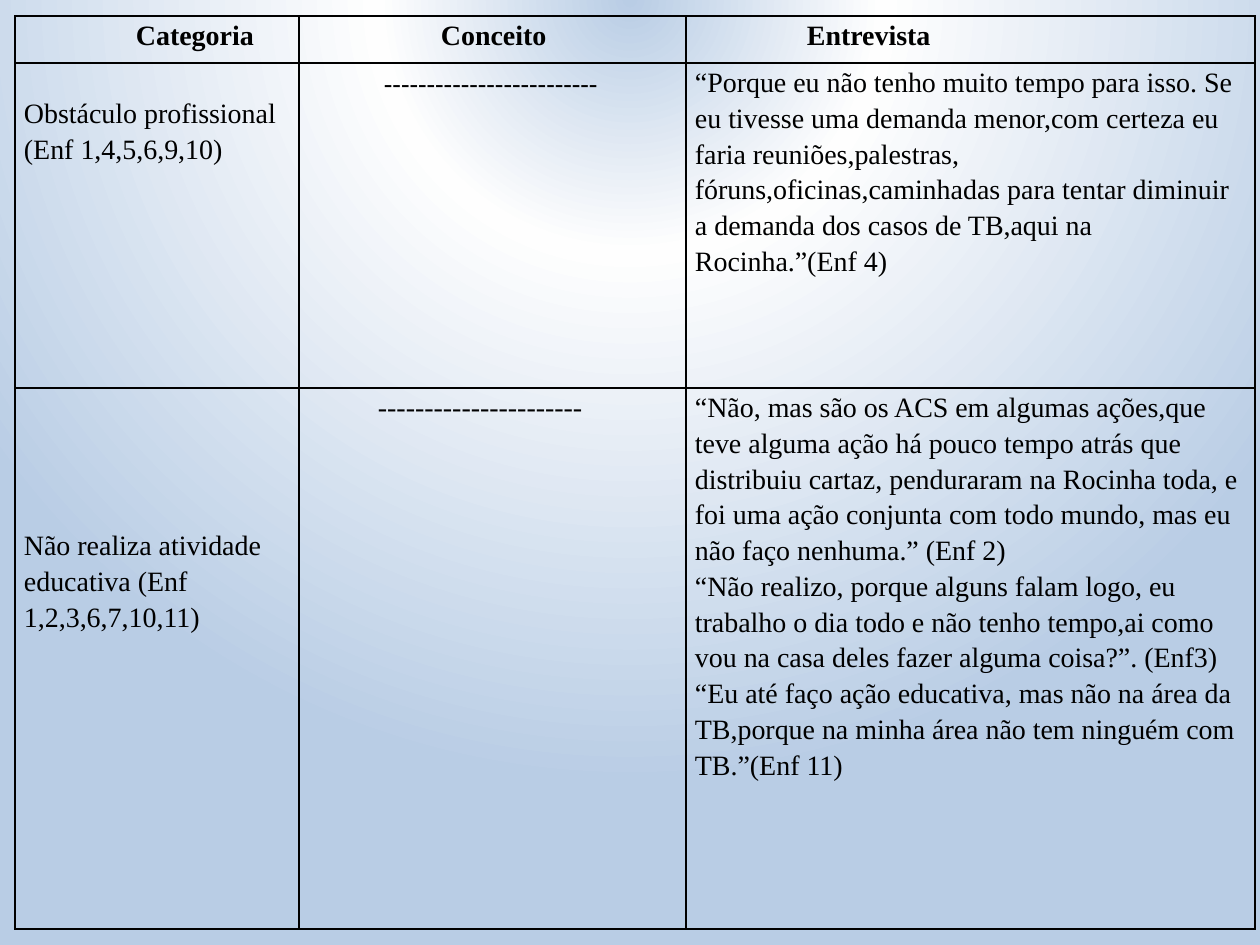
import dataclasses

import lxml.etree
import pptx
import pptx.dml.color
import pptx.oxml
import pptx.oxml.ns
import pptx.slide
import pptx.table
import pptx.util

EMU = 914400 / 126
COLORS = {"ink": "000000", "sky": "B9CDE5", "glow": "FEFEFE"}
SERIF = "Times New Roman"
NS = pptx.oxml.ns.nsdecls("a")
PAD = 9
COLS = [284, 387, 569]
ROWS = [47, 325, 541]


@dataclasses.dataclass
class Entry:
    lines: list[str]
    left: int = 0
    top: int = 0
    bold: bool = False
    font: str = SERIF


GRID = [
    [
        Entry(["Categoria"], left=112, bold=True),
        Entry(["Conceito"], left=133, bold=True),
        Entry(["Entrevista"], left=112, bold=True),
    ],
    [
        Entry(["Obstáculo profissional", "(Enf 1,4,5,6,9,10)"], top=31),
        Entry(["-" * 25], left=76, font="Calibri"),
        Entry([
            "“Porque eu não tenho muito tempo para isso. Se eu tivesse uma demanda "
            "menor,com certeza eu faria reuniões,palestras, fóruns,oficinas,caminhadas "
            "para tentar diminuir a demanda dos casos de TB,aqui na Rocinha.”(Enf 4)",
        ]),
    ],
    [
        Entry(["Não realiza atividade educativa (Enf 1,2,3,6,7,10,11)"], top=138),
        Entry(["-" * 22], left=70),
        Entry([
            "“Não, mas são os ACS em algumas ações,que teve alguma ação há pouco tempo "
            "atrás que distribuiu cartaz, penduraram na Rocinha toda, e foi uma ação "
            "conjunta com todo mundo, mas eu não faço nenhuma.” (Enf 2)",
            "“Não realizo, porque alguns falam logo, eu trabalho o dia todo e não tenho "
            "tempo,ai como vou na casa deles fazer alguma coisa?”. (Enf3)",
            "“Eu até faço ação educativa, mas não na área da TB,porque na minha área "
            "não tem ninguém com TB.”(Enf 11)",
        ]),
    ],
]


def px(num: int) -> pptx.util.Emu:
    return pptx.util.Emu(round(num * EMU))


def paint_back(slide: pptx.slide.Slide) -> None:
    """Fill the background with a round glow centred above the slide."""
    slide.background.fill.solid()
    old = slide.background._cSld.find(".//" + pptx.oxml.ns.qn("a:solidFill"))
    stops = "".join(
        f'<a:gs pos="{pos * 1000}"><a:srgbClr val="{COLORS[name]}"/></a:gs>'
        for pos, name in [(0, "sky"), (32, "glow"), (100, "sky")]
    )
    grad = pptx.oxml.parse_xml(
        f'<a:gradFill {NS} rotWithShape="1"><a:gsLst>{stops}</a:gsLst>'
        '<a:path path="circle"><a:fillToRect l="50000" t="-80000" r="50000" b="180000"/>'
        "</a:path></a:gradFill>"
    )
    old.getparent().replace(old, grad)


def add_edges(cell: pptx.table._Cell) -> None:
    props = cell._tc.get_or_add_tcPr()
    for place, side in enumerate("LRTB"):
        props.insert(place, pptx.oxml.parse_xml(
            f'<a:ln{side} {NS} w="12700"><a:solidFill>'
            f'<a:srgbClr val="{COLORS["ink"]}"/></a:solidFill></a:ln{side}>'
        ))


def fill_cell(cell: pptx.table._Cell, entry: Entry) -> None:
    cell.fill.background()
    cell.margin_left, cell.margin_right = px(PAD + entry.left), px(PAD)
    cell.margin_top, cell.margin_bottom = px(entry.top), 0
    cell.text_frame.text = "\n".join(entry.lines)
    for para in cell.text_frame.paragraphs:
        para.line_spacing = 1.15
        for run in para.runs:
            run.font.name = entry.font
            run.font.size = pptx.util.Pt(16)
            run.font.bold = entry.bold
            run.font.color.rgb = pptx.dml.color.RGBColor.from_string(COLORS["ink"])
    add_edges(cell)


def add_grid(slide: pptx.slide.Slide) -> None:
    table = slide.shapes.add_table(
        len(ROWS), len(COLS), px(15), px(16), px(sum(COLS)), px(sum(ROWS))
    ).table
    table.first_row = table.horz_banding = False
    for col, width in zip(table.columns, COLS):
        col.width = px(width)
    for row, height, line in zip(table.rows, ROWS, GRID):
        row.height = px(height)
        for cell, entry in zip(row.cells, line):
            fill_cell(cell, entry)


def main() -> None:
    deck = pptx.Presentation()
    deck.slide_width, deck.slide_height = px(1260), px(945)
    slide = deck.slides.add_slide(deck.slide_layouts[6])
    paint_back(slide)
    add_grid(slide)
    deck.save("out.pptx")


if __name__ == "__main__":
    main()
